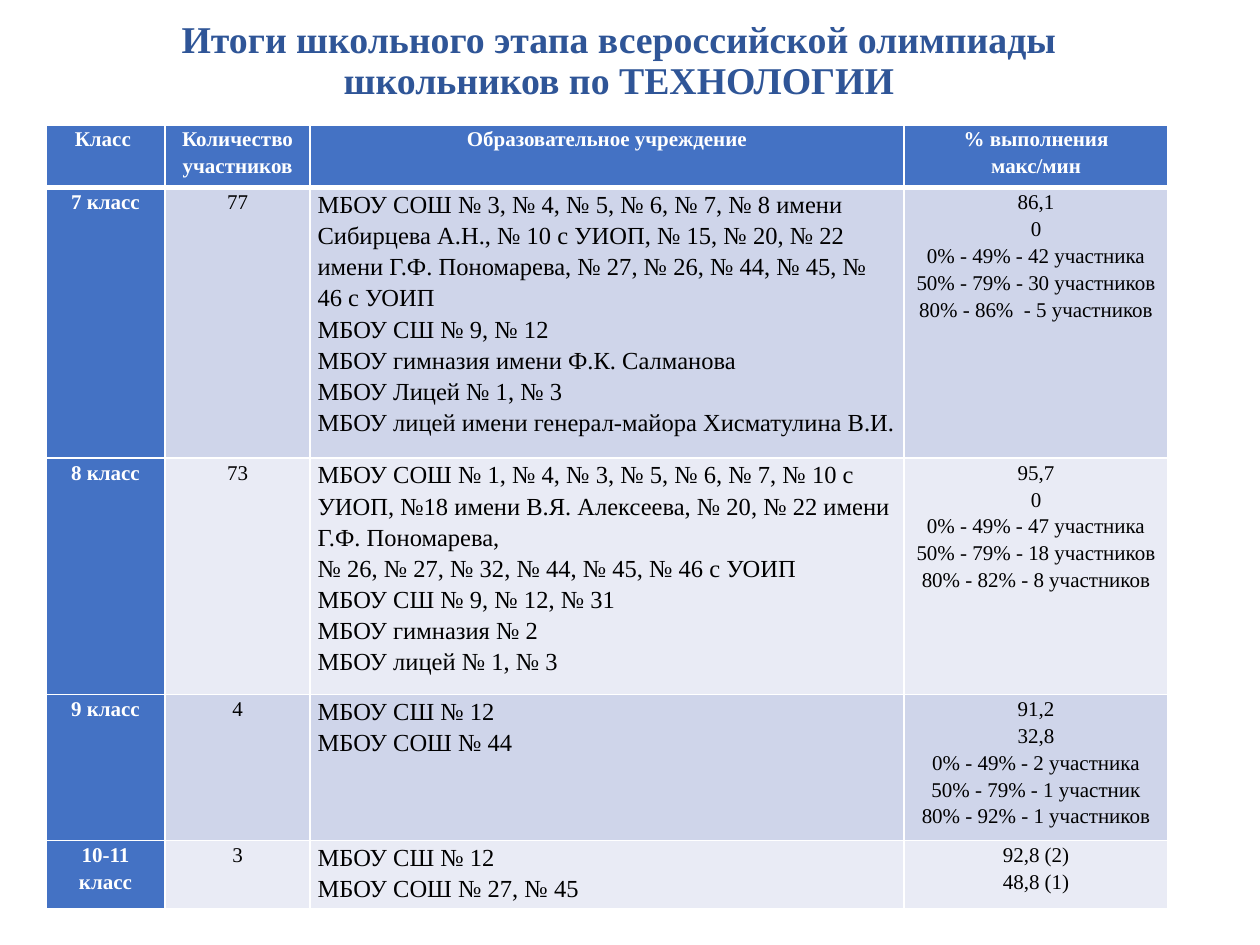
import pptx
import pptx.util
import pptx.dml.color
import pptx.enum.text
import pptx.oxml
import pptx.oxml.ns
from pptx.util import Pt

COLORS = {
    "title": "2F5597",
    "accent": "4472C4",
    "odd": "CFD5EA",
    "even": "E9EBF5",
    "light": "FFFFFF",
    "dark": "000000",
}
FONT = "Times New Roman"
ALIGN = pptx.enum.text.PP_ALIGN
TITLE = "Итоги школьного этапа всероссийской олимпиады школьников по ТЕХНОЛОГИИ"
COLUMN_WIDTHS = [68.2, 82.8, 339.4, 151]
ROW_HEIGHTS = [36, 127.5, 127.5, 83.5, 36]
ROWS = [
    [["Класс "], ["Количество участников"], ["Образовательное учреждение"],
     ["% выполнения", "макс/мин"]],
    [["7 класс"], ["77"],
     ["МБОУ СОШ № 3, № 4, № 5, № 6, № 7, № 8 имени Сибирцева А.Н., № 10 с УИОП, "
      "№ 15, № 20, № 22 имени Г.Ф. Пономарева, № 27, № 26, № 44, № 45, № 46 с УОИП",
      "МБОУ СШ № 9, № 12",
      "МБОУ гимназия имени Ф.К. Салманова",
      "МБОУ Лицей № 1, № 3",
      "МБОУ лицей имени генерал-майора Хисматулина В.И."],
     ["86,1", "0", "0% - 49% - 42 участника", "50% - 79% - 30 участников",
      "80% - 86%  - 5 участников"]],
    [["8 класс"], ["73"],
     ["МБОУ СОШ № 1, № 4, № 3, № 5, № 6, № 7, № 10 с УИОП, №18 имени В.Я. Алексеева, "
      "№ 20, № 22 имени Г.Ф. Пономарева,\v№ 26, № 27, № 32, № 44, № 45, № 46 с УОИП",
      "МБОУ СШ № 9, № 12, № 31",
      "МБОУ гимназия № 2",
      "МБОУ лицей № 1, № 3"],
     ["95,7", "0", "0% - 49% - 47 участника", "50% - 79% - 18 участников",
      "80% - 82% - 8 участников"]],
    [["9 класс"], ["4"],
     ["МБОУ СШ № 12", "МБОУ СОШ № 44"],
     ["91,2", "32,8", "0% - 49% - 2 участника", "50% - 79% - 1 участник",
      "80% - 92% - 1 участников"]],
    [["10-11 класс"], ["3"],
     ["МБОУ СШ № 12", "МБОУ СОШ № 27, № 45"],
     ["92,8 (2)", "48,8 (1)"]],
]


def rgb(name):
    return pptx.dml.color.RGBColor.from_string(COLORS[name])


def apply(target, values):
    for name, value in values.items():
        setattr(target, name, value)


def write(frame, lines, size, color, bold, align, spacing):
    for index, line in enumerate(lines):
        para = frame.add_paragraph() if index else frame.paragraphs[0]
        para.text = line
        apply(para, {"alignment": align, "line_spacing": spacing})
        for span in para.runs:
            apply(span.font, {"name": FONT, "size": Pt(size), "bold": bold})
            span.font.color.rgb = rgb(color)


def add_borders(cell, widths):
    properties = cell._tc.get_or_add_tcPr()
    for position, (side, width) in enumerate(widths.items()):
        border = pptx.oxml.parse_xml(
            f'<a:{side} {pptx.oxml.ns.nsdecls("a")} w="{Pt(width)}"><a:solidFill>'
            f'<a:srgbClr val="{COLORS["light"]}"/></a:solidFill></a:{side}>')
        properties.insert(position, border)


def add_title(page, left, top, width, height):
    frame = page.shapes.add_textbox(Pt(left), Pt(top), Pt(width), Pt(height)).text_frame
    apply(frame, {"word_wrap": True,
                  "vertical_anchor": pptx.enum.text.MSO_ANCHOR.MIDDLE})
    write(frame, [TITLE], 21.6, "title", True, ALIGN.CENTER, 0.9)


def add_results(page, left, top):
    table = page.shapes.add_table(
        len(ROWS), len(COLUMN_WIDTHS), Pt(left), Pt(top),
        Pt(sum(COLUMN_WIDTHS)), Pt(sum(ROW_HEIGHTS))).table
    for column, width in zip(table.columns, COLUMN_WIDTHS):
        column.width = Pt(width)
    for row, height in zip(table.rows, ROW_HEIGHTS):
        row.height = Pt(height)
    for row_index, row in enumerate(ROWS):
        for column_index, lines in enumerate(row):
            cell = table.cell(row_index, column_index)
            heading = row_index == 0 or column_index == 0
            schools = row_index > 0 and column_index == 2
            apply(cell, {"margin_left": Pt(4.3), "margin_right": Pt(4.3),
                         "margin_top": 0, "margin_bottom": 0})
            cell.fill.solid()
            band = "odd" if row_index % 2 else "even"
            cell.fill.fore_color.rgb = rgb("accent" if heading else band)
            add_borders(cell, {"lnL": 1, "lnR": 1,
                               "lnT": 3 if row_index == 1 else 1,
                               "lnB": 3 if row_index == 0 else 1})
            write(cell.text_frame, lines, 14 if schools else 12,
                  "light" if heading else "dark", heading,
                  ALIGN.LEFT if schools else ALIGN.CENTER, 1.15)


def main():
    deck = pptx.Presentation()
    apply(deck, {"slide_width": Pt(720), "slide_height": Pt(540)})
    page = deck.slides.add_slide(deck.slide_layouts[6])
    add_title(page, 77, 15, 553.5, 40.5)
    add_results(page, 26.2, 71.3)
    deck.save("out.pptx")


if __name__ == "__main__":
    main()
